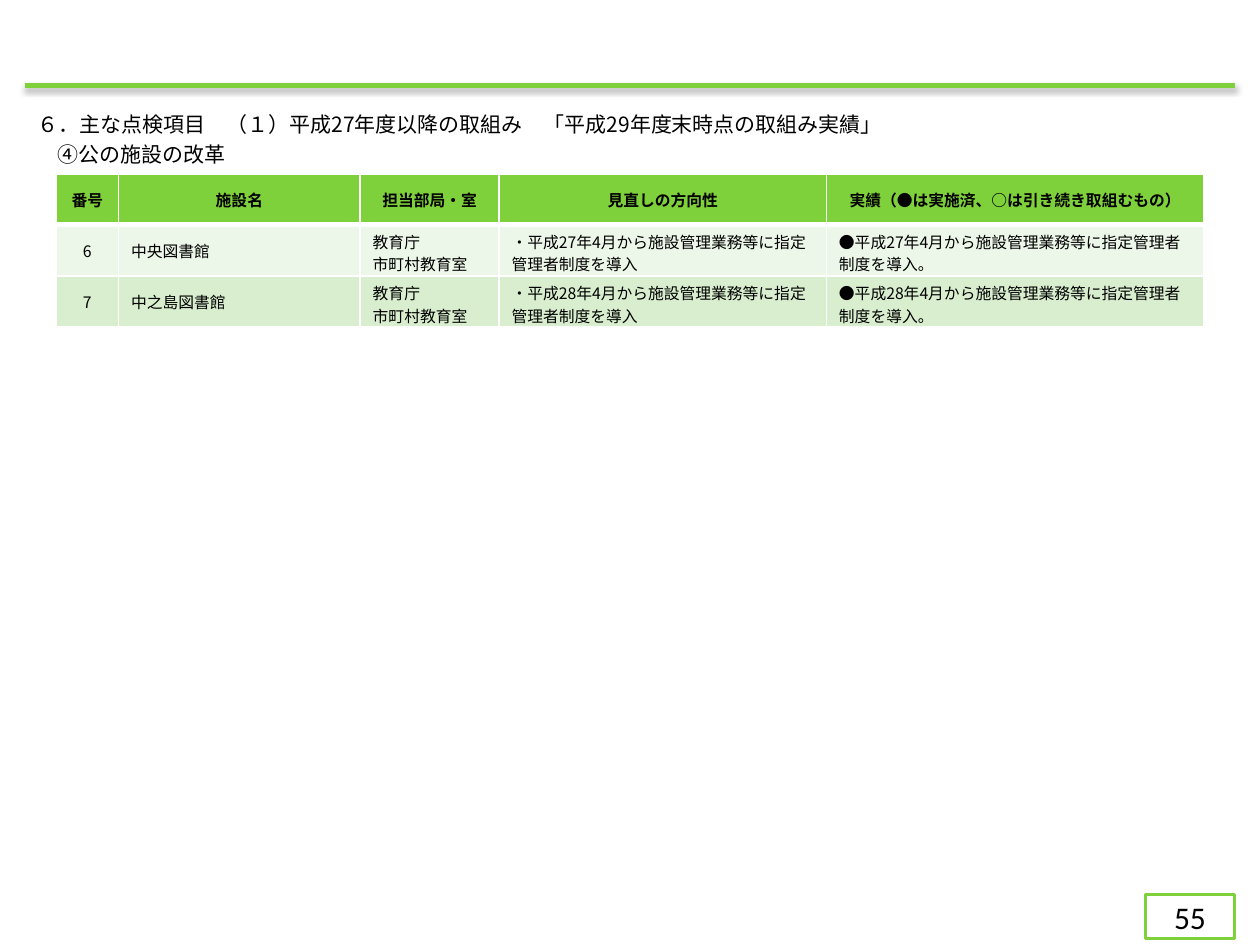
from lxml import etree
from pptx import Presentation
from pptx.dml.color import RGBColor
from pptx.enum import shapes, text
from pptx.oxml import ns
from pptx.util import Cm, Pt

GREEN = RGBColor(0x7F, 0xD1, 0x3B)
PALE = RGBColor(0xED, 0xF7, 0xE9)
LIGHT = RGBColor(0xD8, 0xEE, 0xCE)
WHITE = RGBColor(0xFF, 0xFF, 0xFF)
BLACK = RGBColor(0, 0, 0)
FONT = "Noto Sans CJK JP"

TITLE = "６．主な点検項目　（１）平成27年度以降の取組み　「平成29年度末時点の取組み実績」"
SUBTITLE = "④公の施設の改革"
PAGE_NUMBER = "55"
HEADERS = ["番号", "施設名", "担当部局・室", "見直しの方向性",
           "実績（●は実施済、○は引き続き取組むもの）"]
OFFICE = ["教育庁", "市町村教育室"]
FACILITIES = [("6", "中央図書館", 27), ("7", "中之島図書館", 28)]
COLUMN_WIDTHS = [1.26, 4.87, 2.8, 6.6, 7.6]
ROW_HEIGHTS = [1.02, 1.03, 1.03]


def add_text(para, words, size, font=FONT, bold=False, align=text.PP_ALIGN.LEFT):
    para.alignment = align
    span = para.add_run()
    span.text = words
    span.font.size = Pt(size)
    span.font.name = font
    span.font.bold = bold
    span.font.color.rgb = BLACK
    east_asian = etree.SubElement(span.font._element, ns.qn("a:ea"))
    east_asian.set("typeface", font)
    span.font._element.find(ns.qn("a:latin")).addnext(east_asian)


def add_heading(box, words):
    frame = box.text_frame
    frame.word_wrap = True
    frame.auto_size = text.MSO_AUTO_SIZE.NONE
    frame.vertical_anchor = text.MSO_ANCHOR.MIDDLE
    add_text(frame.paragraphs[0], words, 12)


def add_shadow(line):
    effects = etree.SubElement(line._element.spPr, ns.qn("a:effectLst"))
    shadow = etree.SubElement(effects, ns.qn("a:outerShdw"), blurRad=str(Pt(3.1)),
                              dist=str(Pt(1.8)), dir="5400000", rotWithShape="0")
    color = etree.SubElement(shadow, ns.qn("a:srgbClr"), val=str(BLACK))
    etree.SubElement(color, ns.qn("a:alpha"), val="35000")


def set_borders(cell, bottom):
    properties = cell._tc.get_or_add_tcPr()
    widths = {"lnL": 1, "lnR": 1, "lnT": 1, "lnB": bottom}
    for index, (side, width) in enumerate(widths.items()):
        border = etree.Element(ns.qn("a:" + side), w=str(Pt(width)))
        fill = etree.SubElement(border, ns.qn("a:solidFill"))
        etree.SubElement(fill, ns.qn("a:srgbClr"), val=str(WHITE))
        properties.insert(index, border)


def fill_cell(cell, lines, color, header, centered, two_lines):
    cell.fill.solid()
    cell.fill.fore_color.rgb = color
    cell.vertical_anchor = text.MSO_ANCHOR.MIDDLE
    if two_lines:
        cell.margin_top, cell.margin_bottom = Cm(0.1), Cm(0)
    frame = cell.text_frame
    align = text.PP_ALIGN.CENTER if centered else text.PP_ALIGN.LEFT
    for index, words in enumerate(lines):
        para = frame.add_paragraph() if index else frame.paragraphs[0]
        add_text(para, words, 9, bold=header, align=align)
    set_borders(cell, 3 if header else 1)


def add_facility_table(page):
    rows = [[[words] for words in HEADERS]]
    for number, name, year in FACILITIES:
        plan = f"平成{year}年4月から施設管理業務等に指定管理者制度を導入"
        rows.append([[number], [name], OFFICE, ["・" + plan], ["●" + plan + "。"]])
    table = page.shapes.add_table(len(rows), len(HEADERS), Cm(1.13), Cm(3.51),
                                  Cm(sum(COLUMN_WIDTHS)), Cm(sum(ROW_HEIGHTS))).table
    for column, width in zip(table.columns, COLUMN_WIDTHS):
        column.width = Cm(width)
    for row, height in zip(table.rows, ROW_HEIGHTS):
        row.height = Cm(height)
    for r, (row, color) in enumerate(zip(rows, [GREEN, PALE, LIGHT])):
        for c, lines in enumerate(row):
            header = r == 0
            fill_cell(table.cell(r, c), lines, color, header,
                      centered=header or c == 0, two_lines=not header and c >= 2)


def main():
    deck = Presentation()
    deck.slide_width, deck.slide_height = Cm(25.4), Cm(19.05)
    page = deck.slides.add_slide(deck.slide_layouts.get_by_name("Title Only"))

    title = page.shapes.title
    title.left, title.top, title.width, title.height = Cm(0.5), Cm(2.13), Cm(18.4), Cm(0.76)
    add_heading(title, TITLE)

    rule = page.shapes.add_connector(shapes.MSO_CONNECTOR.STRAIGHT,
                                     Cm(0.5), Cm(1.73), Cm(24.9), Cm(1.73))
    rule.line.color.rgb = GREEN
    rule.line.width = Pt(3)
    add_shadow(rule)

    subtitle = page.shapes.add_textbox(Cm(0.92), Cm(2.72), Cm(8.97), Cm(0.76))
    add_heading(subtitle, SUBTITLE)

    add_facility_table(page)

    number_box = page.shapes.add_shape(shapes.MSO_SHAPE.RECTANGLE,
                                       Cm(23.09), Cm(18.03), Cm(1.8), Cm(0.89))
    number_box.shadow.inherit = False
    number_box.fill.solid()
    number_box.fill.fore_color.rgb = WHITE
    number_box.line.color.rgb = GREEN
    number_box.line.width = Pt(2)
    number_box.text_frame.vertical_anchor = text.MSO_ANCHOR.MIDDLE
    add_text(number_box.text_frame.paragraphs[0], PAGE_NUMBER, 18,
             font="Calibri", align=text.PP_ALIGN.CENTER)

    deck.save("out.pptx")


if __name__ == "__main__":
    main()
